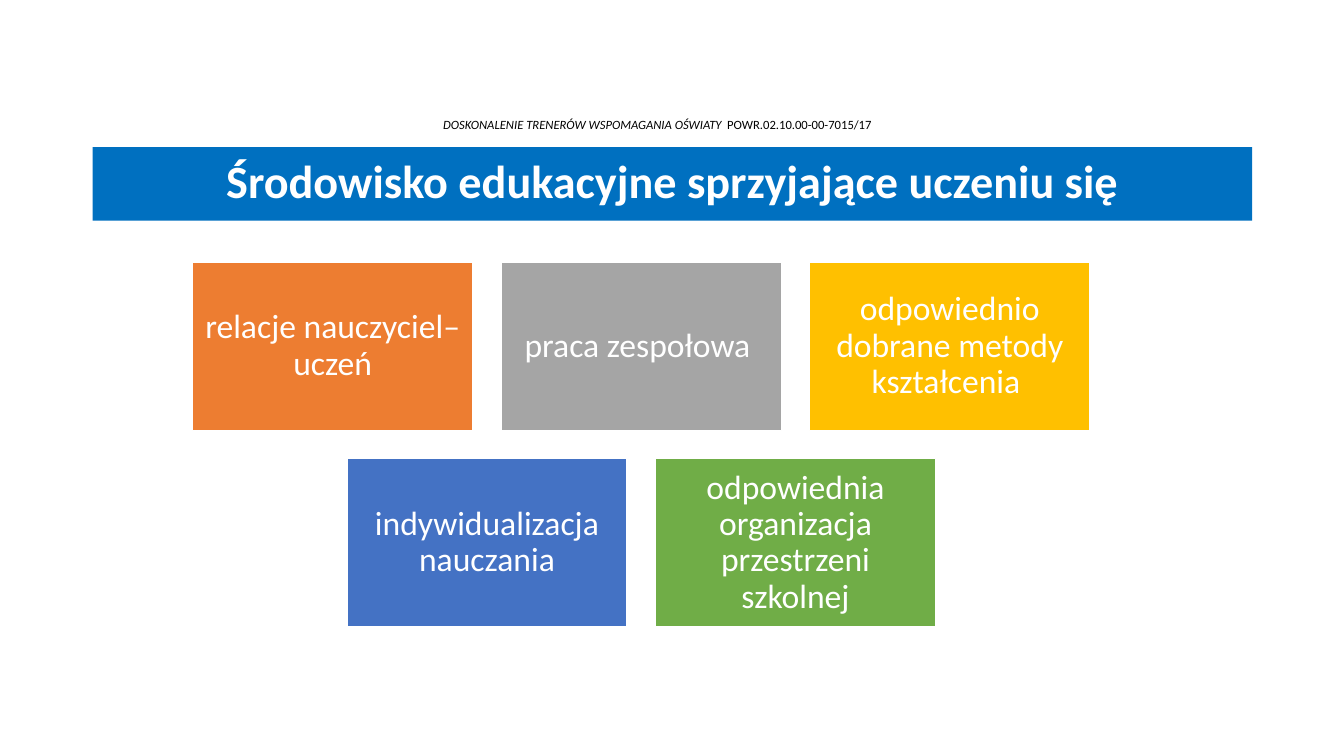
import pptx
import pptx.util
import pptx.dml.color
import pptx.enum.shapes
import pptx.enum.text

Inches = pptx.util.Inches
Pt = pptx.util.Pt

PROJECT = [("DOSKONALENIE TRENERÓW WSPOMAGANIA OŚWIATY  ", True),
           ("POWR.02.10.00-00-7015/17", False)]
TITLE = "Środowisko edukacyjne sprzyjające uczeniu się"
FACTOR_ROWS = [
    [("relacje nauczyciel–uczeń", "orange"),
     ("praca zespołowa ", "gray"),
     ("odpowiednio dobrane metody kształcenia ", "gold")],
    [("indywidualizacja nauczania", "blue"),
     ("odpowiednia organizacja przestrzeni szkolnej", "green")],
]
COLORS = {"black": "000000", "white": "FFFFFF", "banner": "0070C0",
          "orange": "ED7D31", "gray": "A5A5A5", "gold": "FFC000",
          "blue": "4472C4", "green": "70AD47"}
FONT = "Calibri"
CARD_WIDTH, CARD_HEIGHT, GAP = 2.78, 1.67, 0.28
GRID_CENTER, GRID_TOP = 6.36, 2.6


def rgb(name):
    """Return the named colour."""
    return pptx.dml.color.RGBColor.from_string(COLORS[name])


def center_text(frame, runs, size, color, bold=False):
    """Write centred runs, each a pair of text and italic flag."""
    frame.word_wrap = True
    frame.vertical_anchor = pptx.enum.text.MSO_ANCHOR.MIDDLE
    paragraph = frame.paragraphs[0]
    paragraph.alignment = pptx.enum.text.PP_ALIGN.CENTER
    paragraph.line_spacing = 0.9
    for text, italic in runs:
        run = paragraph.add_run()
        run.text = text
        run.font.name = FONT
        run.font.size = Pt(size)
        run.font.bold = bold
        run.font.italic = italic
        run.font.color.rgb = rgb(color)


def add_block(slide, box, fill, text, size, bold=False):
    """Add a filled rectangle with white text."""
    block = slide.shapes.add_shape(
        pptx.enum.shapes.MSO_SHAPE.RECTANGLE, *map(Inches, box))
    block.shadow.inherit = False
    block.fill.solid()
    block.fill.fore_color.rgb = rgb(fill)
    block.line.fill.background()
    center_text(block.text_frame, [(text, False)], size, "white", bold)
    return block


def main():
    """Build the slide."""
    deck = pptx.Presentation()
    deck.slide_width, deck.slide_height = Inches(13.33), Inches(7.5)
    slide = deck.slides.add_slide(deck.slide_layouts[6])

    project = slide.shapes.add_textbox(
        Inches(0.79), Inches(1.09), Inches(11.46), Inches(0.3))
    center_text(project.text_frame, PROJECT, 9, "black")

    add_block(slide, (0.92, 1.46, 11.5, 0.73), "banner", TITLE, 33, True)

    for row, factors in enumerate(FACTOR_ROWS):
        row_width = len(factors) * (CARD_WIDTH + GAP) - GAP
        left = GRID_CENTER - row_width / 2
        top = GRID_TOP + row * (CARD_HEIGHT + GAP)
        for column, (factor, fill) in enumerate(factors):
            box = (left + column * (CARD_WIDTH + GAP), top, CARD_WIDTH, CARD_HEIGHT)
            card = add_block(slide, box, fill, factor, 24)
            card.line.color.rgb = rgb("white")
            card.line.width = Pt(1)
            frame = card.text_frame
            frame.margin_left = frame.margin_right = Inches(0.1)
            frame.margin_top = frame.margin_bottom = Inches(0.1)

    deck.save("out.pptx")


if __name__ == "__main__":
    main()
